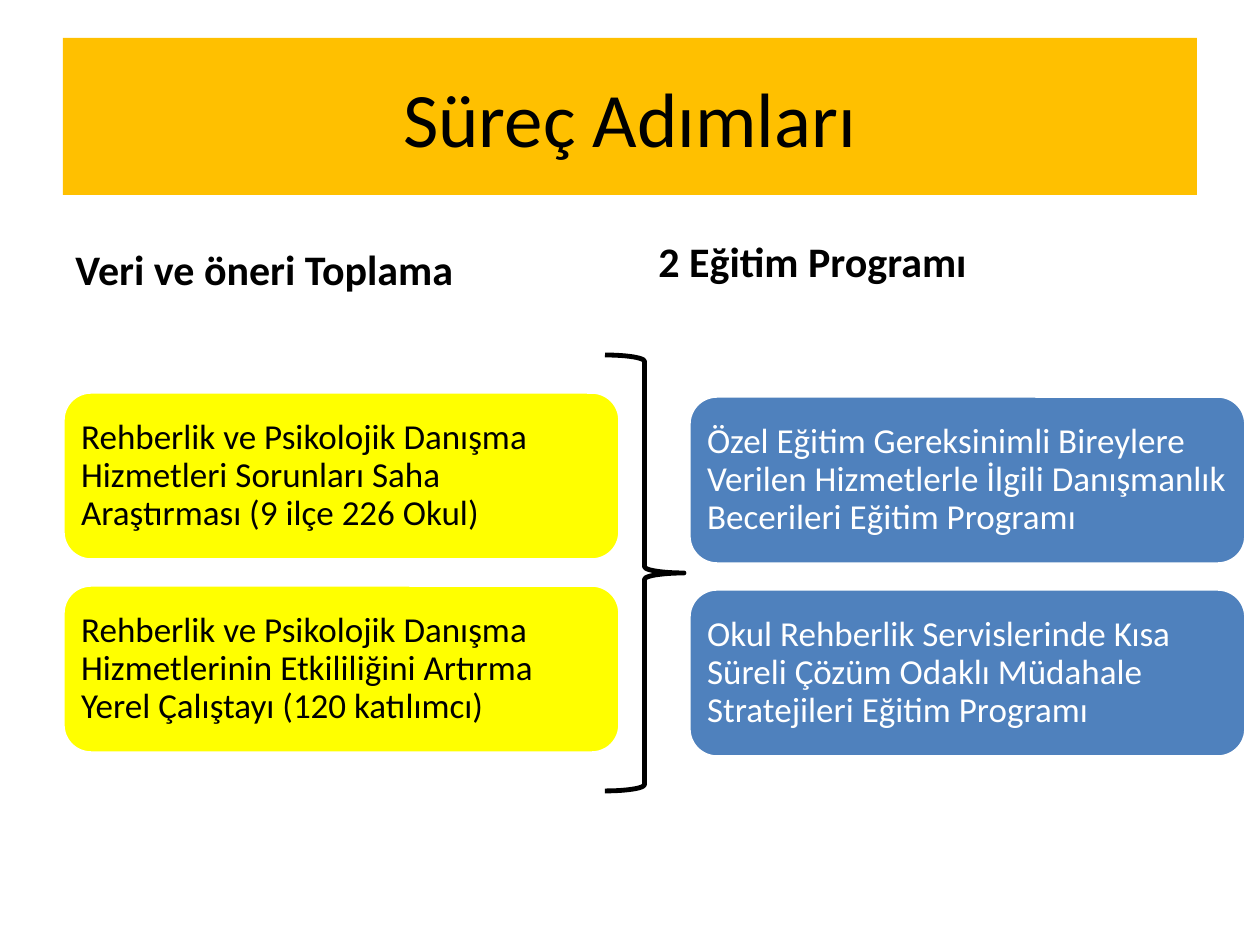
from dataclasses import dataclass

from pptx import Presentation
from pptx.dml.color import RGBColor
from pptx.enum.shapes import MSO_SHAPE
from pptx.enum.text import MSO_ANCHOR, PP_ALIGN
from pptx.util import Emu, Pt


@dataclass(frozen=True)
class Theme:
    """Colours, font and type sizes of the slide."""
    font: str = "Calibri"
    black: RGBColor = RGBColor(0, 0, 0)
    white: RGBColor = RGBColor(255, 255, 255)
    amber: RGBColor = RGBColor(255, 192, 0)
    yellow: RGBColor = RGBColor(255, 255, 0)
    blue: RGBColor = RGBColor(79, 129, 189)
    title_size: int = 44
    heading_size: int = 24
    card_size: int = 20


THEME = Theme()


def px(length):
    """Turn whole pixels, 126 to the inch, into EMU."""
    return Emu(round(length * 914400 / 126))


def place(box):
    """Turn a pixel box into EMU lengths."""
    return [px(length) for length in box]


def write(frame, wording, size, color, anchor, align=PP_ALIGN.LEFT, bold=False):
    """Write one paragraph into a text frame and return it."""
    frame.word_wrap = True
    frame.vertical_anchor = anchor
    paragraph = frame.paragraphs[0]
    paragraph.alignment = align
    run = paragraph.add_run()
    run.text = wording
    run.font.name = THEME.font
    run.font.size = Pt(size)
    run.font.bold = bold
    run.font.color.rgb = color
    return paragraph


def add_title(slide, box, wording):
    """Add the filled title band."""
    band = slide.shapes.add_shape(MSO_SHAPE.RECTANGLE, *place(box))
    band.shadow.inherit = False
    band.fill.solid()
    band.fill.fore_color.rgb = THEME.amber
    band.line.fill.background()
    write(band.text_frame, wording, THEME.title_size, THEME.black,
          MSO_ANCHOR.MIDDLE, PP_ALIGN.CENTER)


def add_heading(slide, box, wording, bottom_inset):
    """Add a bold column heading resting on its bottom inset."""
    heading = slide.shapes.add_textbox(*place(box))
    heading.text_frame.margin_bottom = px(bottom_inset)
    write(heading.text_frame, wording, THEME.heading_size, THEME.black,
          MSO_ANCHOR.BOTTOM, bold=True)


def add_cards(slide, box, steps, fill, color):
    """Stack one rounded card per step at equal gaps within the box."""
    left, top, width, height = box
    gap = 25
    card_height = (height - gap * (len(steps) - 1)) // len(steps)
    for index, step in enumerate(steps):
        card_top = top + index * (card_height + gap)
        card = slide.shapes.add_shape(
            MSO_SHAPE.ROUNDED_RECTANGLE,
            *place((left, card_top, width, card_height)))
        card.shadow.inherit = False
        card.fill.solid()
        card.fill.fore_color.rgb = fill
        card.line.color.rgb = THEME.white
        card.line.width = Pt(2)
        frame = card.text_frame
        frame.margin_left = frame.margin_right = px(10)
        frame.margin_top = frame.margin_bottom = px(10)
        paragraph = write(frame, step, THEME.card_size, color, MSO_ANCHOR.MIDDLE)
        paragraph.line_spacing = 0.9


def add_brace(slide, box):
    """Add the brace that leads from the left column to the right one."""
    brace = slide.shapes.add_shape(MSO_SHAPE.RIGHT_BRACE, *place(box))
    brace.shadow.inherit = False
    brace.adjustments[0] = 0.08
    brace.adjustments[1] = 0.5
    brace.fill.background()
    brace.line.color.rgb = THEME.black
    brace.line.width = Pt(2.75)


def main():
    """Build and save the slide."""
    presentation = Presentation()
    presentation.slide_width = px(1260)
    presentation.slide_height = px(945)
    slide = presentation.slides.add_slide(presentation.slide_layouts[6])

    add_title(slide, (63, 38, 1134, 157), "Süreç Adımları")
    add_heading(slide, (63, 212, 557, 88), "Veri ve öneri Toplama", 6)
    add_cards(slide, (63, 392, 557, 361), [
        "Rehberlik ve Psikolojik Danışma Hizmetleri Sorunları Saha "
        "Araştırması (9 ilçe 226 Okul)",
        "Rehberlik ve Psikolojik Danışma Hizmetlerinin Etkililiğini Artırma "
        "Yerel Çalıştayı (120 katılımcı)",
    ], THEME.yellow, THEME.black)
    add_heading(slide, (646, 234, 577, 88), "2 Eğitim Programı", 36)
    add_cards(slide, (689, 396, 557, 361), [
        "Özel Eğitim Gereksinimli Bireylere Verilen Hizmetlerle İlgili "
        "Danışmanlık Becerileri Eğitim Programı",
        "Okul Rehberlik Servislerinde Kısa Süreli Çözüm Odaklı Müdahale "
        "Stratejileri Eğitim Programı",
    ], THEME.blue, THEME.white)
    add_brace(slide, (605, 355, 79, 436))

    presentation.save("out.pptx")


if __name__ == "__main__":
    main()
